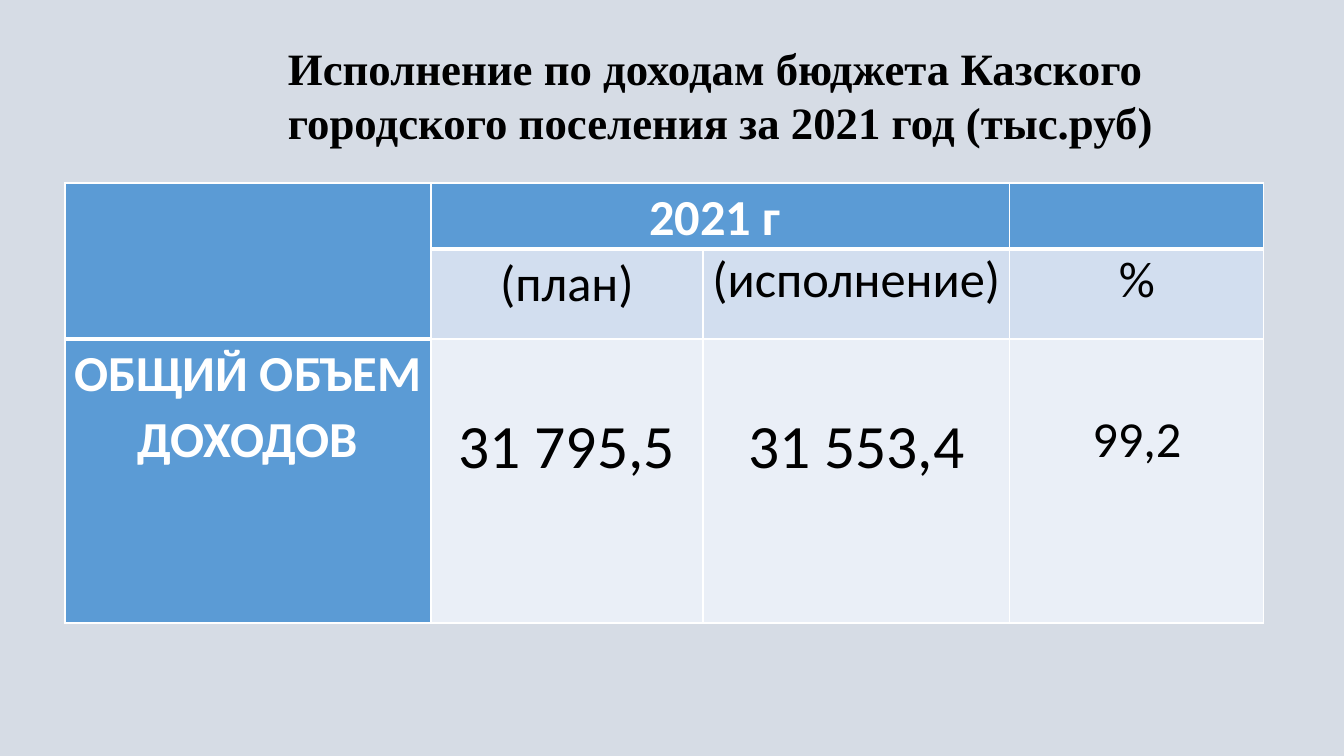
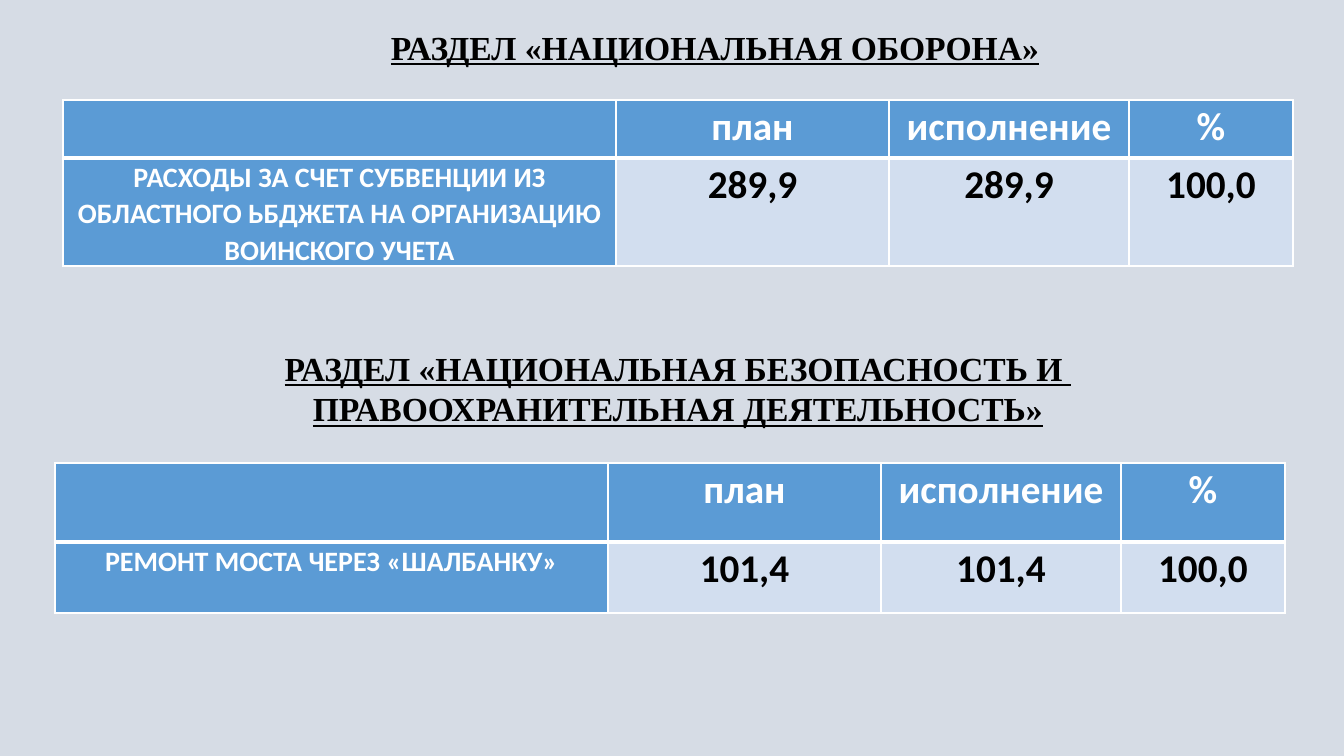
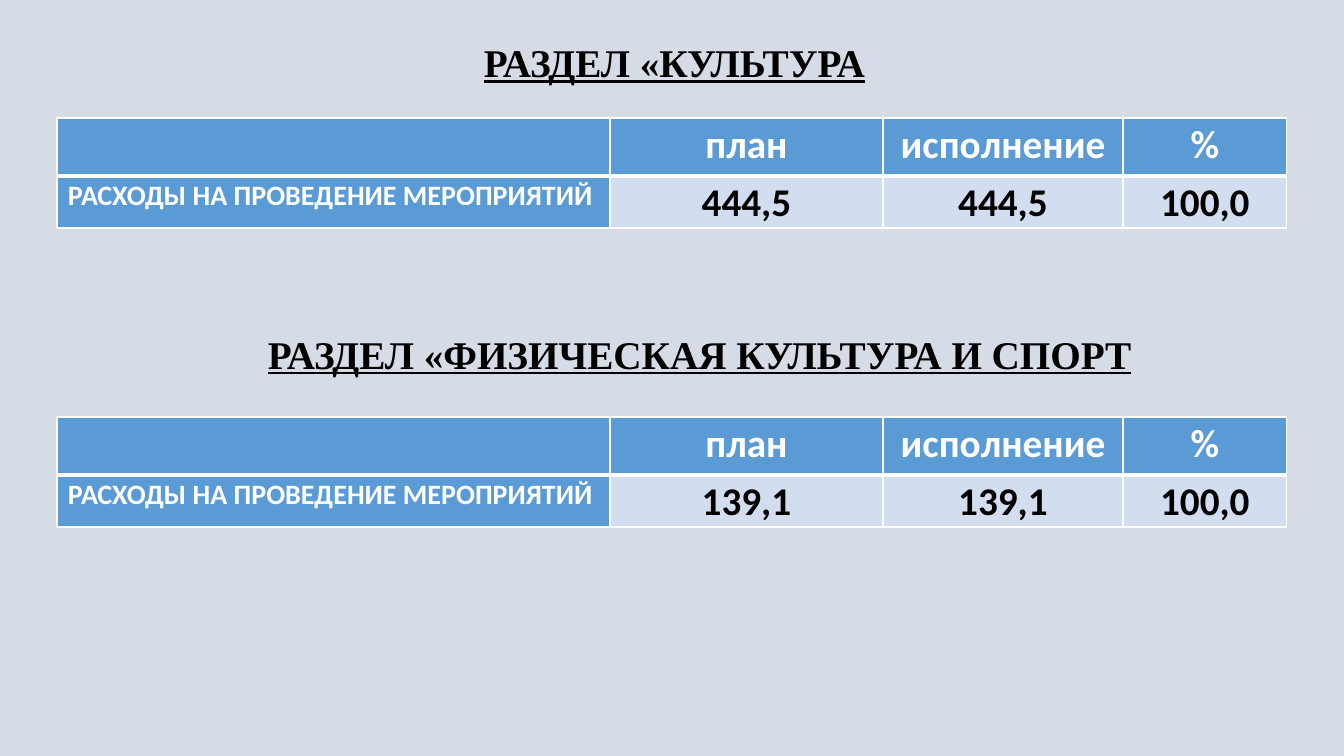
from dataclasses import dataclass

from lxml import etree
from pptx import Presentation
from pptx import util as u
from pptx.dml.color import RGBColor
from pptx.enum import text
from pptx.oxml import ns

SCALE = 914400 / 100.8
COLORS = {
    "page": "D6DCE5",
    "header": "5B9BD5",
    "band": "D2DEEF",
    "pale": "EAEFF7",
    "white": "FFFFFF",
    "black": "000000",
}
TITLE_FONT = "Times New Roman"
TABLE_FONT = "Calibri"
LEFT, CENTER = text.PP_ALIGN.LEFT, text.PP_ALIGN.CENTER
SECTION_COLUMNS = (553, 273, 240, 164)


@dataclass
class Cell:
    words: str = ""
    fill: str = "header"
    size: int = 28
    bold: bool = True
    spacing: float = 1.07
    drop: int = 0


def px(length):
    return u.Emu(round(length * SCALE))


def color(name):
    return RGBColor.from_string(COLORS[name])


def add_page(deck):
    page = deck.slides.add_slide(deck.slide_layouts[6])
    page.background.fill.solid()
    page.background.fill.fore_color.rgb = color("page")
    return page


def add_span(para, words, font, size, ink, bold=True, underline=False):
    span = para.add_run()
    span.text = words
    span.font.name = font
    span.font.size = u.Pt(size)
    span.font.bold = bold
    span.font.underline = underline
    span.font.color.rgb = color(ink)


def add_title(page, area, lines, size, align=LEFT, underline=True):
    box = page.shapes.add_textbox(*map(px, area))
    frame = box.text_frame
    frame.word_wrap = True
    for index, line in enumerate(lines):
        para = frame.add_paragraph() if index else frame.paragraphs[0]
        para.alignment = align
        add_span(para, line, TITLE_FONT, size, "black", underline=underline)


def add_borders(target, heavy_top, heavy_bottom):
    """White cell edges; a heavy edge is 3 pt, any other 1 pt."""
    properties = target._tc.get_or_add_tcPr()
    widths = {"L": 1, "R": 1, "T": 3 if heavy_top else 1, "B": 3 if heavy_bottom else 1}
    for side, width in widths.items():
        line = etree.SubElement(properties, ns.qn(f"a:ln{side}"), w=str(u.Pt(width)))
        fill = etree.SubElement(line, ns.qn("a:solidFill"))
        etree.SubElement(fill, ns.qn("a:srgbClr"), val=COLORS["white"])


def fill_cell(target, cell):
    target.fill.solid()
    target.fill.fore_color.rgb = color(cell.fill)
    target.margin_left = target.margin_right = px(7)
    target.margin_top, target.margin_bottom = px(cell.drop), 0
    if cell.words:
        para = target.text_frame.paragraphs[0]
        para.alignment = CENTER
        para.line_spacing = cell.spacing
        ink = "white" if cell.fill == "header" else "black"
        add_span(para, cell.words, TABLE_FONT, cell.size, ink, cell.bold)


def add_grid(page, left, top, columns, rows, cells, heavy):
    """Table whose cells listed in heavy have a thick lower edge."""
    frame = page.shapes.add_table(len(rows), len(columns), px(left), px(top),
                                  px(sum(columns)), px(sum(rows)))
    table = frame.table
    for column, width in zip(table.columns, columns):
        column.width = px(width)
    for row, height in zip(table.rows, rows):
        row.height = px(height)
    for r, line in enumerate(cells):
        for c, cell in enumerate(line):
            target = table.cell(r, c)
            add_borders(target, (r - 1, c) in heavy, (r, c) in heavy)
            fill_cell(target, cell)
    return table


def add_section_table(page, left, top, rows, label, plan, done, percent):
    header = [Cell(words) for words in ("", "план", "исполнение", "%")]
    body = [Cell(label, size=20)]
    body += [Cell(value, "band") for value in (plan, done, percent)]
    heavy = {(0, c) for c in range(len(header))}
    add_grid(page, left, top, SECTION_COLUMNS, rows, [header, body], heavy)


def income_page(deck):
    page = add_page(deck)

    def plain(words, fill, size=36, **options):
        return Cell(words, fill, size, bold=False, **options)

    cells = [
        [Cell(), Cell("2021 г ", size=36), Cell(), Cell()],
        [Cell(), plain("(план)", "band"), plain("(исполнение)", "band", spacing=1),
         plain("%", "band", spacing=1)],
        [Cell("ОБЩИЙ ОБЪЕМ ДОХОДОВ", size=36), plain("31 795,5", "pale", 44, drop=66),
         plain("31 553,4", "pale", 44, drop=66), plain("99,2", "pale", drop=66)],
    ]
    heavy = {(0, c) for c in range(4)} | {(1, 0)}
    table = add_grid(page, 65, 183, (366, 272, 307, 254), (65, 90, 284), cells, heavy)
    table.cell(0, 0).merge(table.cell(1, 0))
    table.cell(0, 1).merge(table.cell(0, 2))
    title = "Исполнение по доходам бюджета Казского городского поселения за 2021 год (тыс.руб)"
    add_title(page, (278, 36, 954, 120), [title], 32, underline=False)


def defence_page(deck):
    page = add_page(deck)
    add_title(page, (378, 22, 674, 50), ["РАЗДЕЛ «НАЦИОНАЛЬНАЯ ОБОРОНА»"], 24, CENTER)
    add_section_table(
        page, 63, 100, (58, 108),
        "РАСХОДЫ ЗА СЧЕТ СУБВЕНЦИИ ИЗ ОБЛАСТНОГО ЬБДЖЕТА НА ОРГАНИЗАЦИЮ ВОИНСКОГО УЧЕТА",
        "289,9", "289,9", "100,0")
    add_title(page, (271, 343, 814, 92),
              ["РАЗДЕЛ «НАЦИОНАЛЬНАЯ БЕЗОПАСНОСТЬ И ", "ПРАВООХРАНИТЕЛЬНАЯ ДЕЯТЕЛЬНОСТЬ»"],
              24, CENTER)
    add_section_table(page, 55, 463, (79, 71), "РЕМОНТ МОСТА ЧЕРЕЗ «ШАЛБАНКУ»",
                      "101,4", "101,4", "100,0")


def culture_page(deck):
    page = add_page(deck)
    label = "РАСХОДЫ НА ПРОВЕДЕНИЕ МЕРОПРИЯТИЙ "
    add_title(page, (474, 33, 595, 57), ["РАЗДЕЛ «КУЛЬТУРА"], 28)
    add_section_table(page, 57, 118, (58, 52), label, "444,5", "444,5", "100,0")
    add_title(page, (258, 325, 893, 57), ["РАЗДЕЛ «ФИЗИЧЕСКАЯ КУЛЬТУРА И СПОРТ"], 28)
    add_section_table(page, 57, 417, (58, 52), label, "139,1", "139,1", "100,0")


def main():
    deck = Presentation()
    deck.slide_width, deck.slide_height = px(1344), px(756)
    for build in (income_page, defence_page, culture_page):
        build(deck)
    deck.save("out.pptx")


if __name__ == "__main__":
    main()
